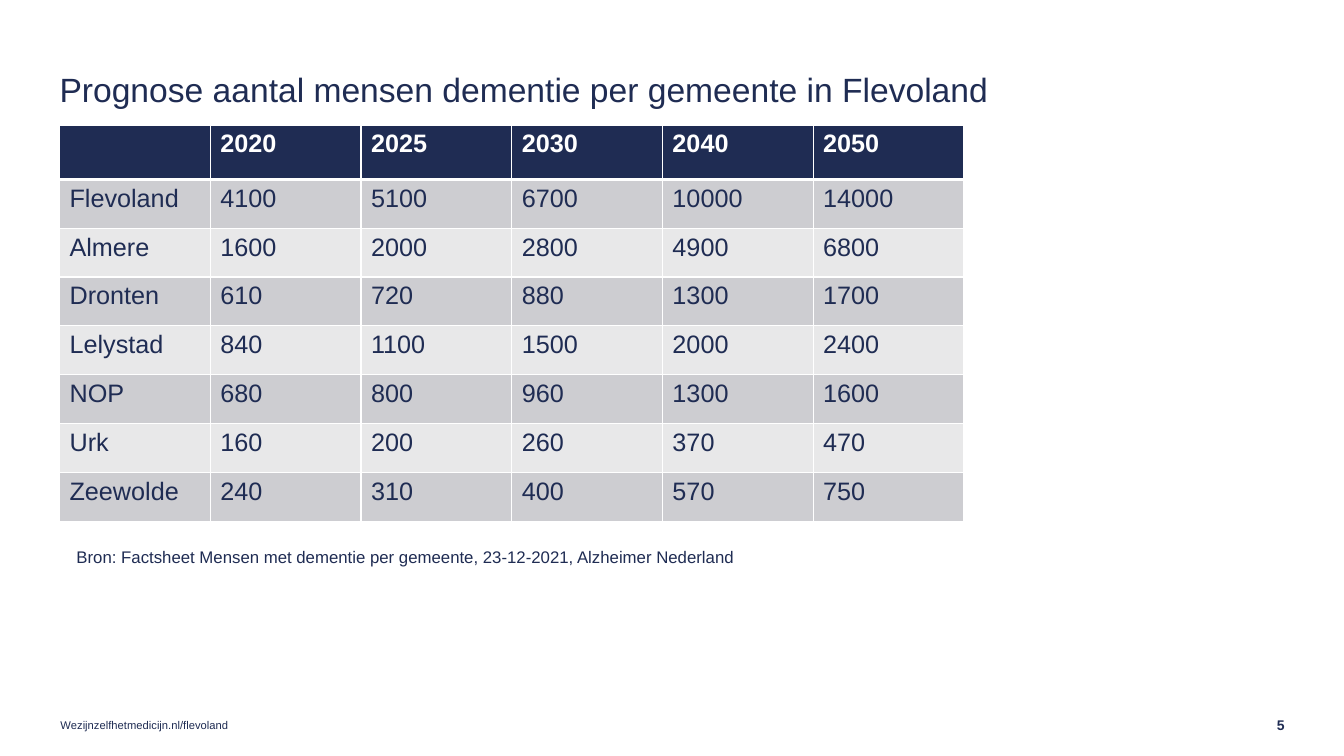
from lxml.etree import SubElement
from pptx import Presentation
from pptx.dml.color import RGBColor
from pptx.enum.text import MSO_ANCHOR, MSO_AUTO_SIZE, PP_ALIGN
from pptx.oxml.ns import qn
from pptx.util import Pt

TITLE = "Prognose aantal mensen dementie per gemeente in Flevoland"
YEARS = ["", "2020", "2025", "2030", "2040", "2050"]
FORECAST = [
    ("Flevoland", 4100, 5100, 6700, 10000, 14000),
    ("Almere", 1600, 2000, 2800, 4900, 6800),
    ("Dronten", 610, 720, 880, 1300, 1700),
    ("Lelystad", 840, 1100, 1500, 2000, 2400),
    ("NOP", 680, 800, 960, 1300, 1600),
    ("Urk", 160, 200, 260, 370, 470),
    ("Zeewolde", 240, 310, 400, 570, 750),
]
SOURCE = "Bron: Factsheet Mensen met dementie per gemeente, 23-12-2021, Alzheimer Nederland"
FOOTER = "Wezijnzelfhetmedicijn.nl/flevoland"
PAGE_NUMBER = "5"

NAVY = RGBColor(0x1F, 0x2C, 0x53)
WHITE = RGBColor(0xFF, 0xFF, 0xFF)
DARK_BAND = RGBColor(0xCD, 0xCD, 0xD1)
LIGHT_BAND = RGBColor(0xE8, 0xE8, 0xE9)
FONT = "Arial"

EMU_PER_PX = 9144
SLIDE_SIZE = (1333, 750)
TITLE_BOX = (59, 60, 1215, 41)
TABLE_BOX = (59, 124, 897, 393)
HEADER_HEIGHT = 54
SOURCE_BOX = (66, 537, 1078, 30)
FOOTER_BOX = (60, 712, 451, 14)
NUMBER_BOX = (1245, 712, 29, 14)


def px(length):
    return round(length * EMU_PER_PX)


def style(para, size, color=NAVY, bold=False):
    for span in para.runs:
        font = span.font
        font.name, font.size, font.bold = FONT, Pt(size), bold
        font.color.rgb = color


def set_insets(frame, top=0):
    frame.margin_left = frame.margin_right = frame.margin_bottom = 0
    frame.margin_top = px(top)
    frame.vertical_anchor = MSO_ANCHOR.MIDDLE


def add_title(page):
    title = page.shapes.title
    title.left, title.top, title.width, title.height = map(px, TITLE_BOX)
    frame = title.text_frame
    frame.text = TITLE
    frame.auto_size = MSO_AUTO_SIZE.NONE
    set_insets(frame, top=12)
    para = frame.paragraphs[0]
    para.alignment = PP_ALIGN.LEFT
    para.line_spacing = Pt(32)
    style(para, 24)


def add_text(page, box, text, size, bold=False, align=PP_ALIGN.LEFT):
    frame = page.shapes.add_textbox(*map(px, box)).text_frame
    frame.word_wrap = True
    frame.text = text
    para = frame.paragraphs[0]
    para.alignment = align
    style(para, size, bold=bold)
    return frame


def set_borders(cell, top, bottom):
    properties = cell._tc.get_or_add_tcPr()
    widths = {"a:lnL": 1, "a:lnR": 1, "a:lnT": top, "a:lnB": bottom}
    for tag, width in widths.items():
        line = SubElement(properties, qn(tag), w=str(Pt(width)))
        fill = SubElement(line, qn("a:solidFill"))
        SubElement(fill, qn("a:srgbClr"), val=str(WHITE))


def add_forecast_table(page):
    rows = [YEARS, *FORECAST]
    width, height = TABLE_BOX[2:]
    table = page.shapes.add_table(len(rows), len(YEARS), *map(px, TABLE_BOX)).table
    for column in table.columns:
        column.width = px(width / len(YEARS))
    for index, values in enumerate(rows):
        header = index == 0
        row_height = HEADER_HEIGHT if header else (height - HEADER_HEIGHT) / len(FORECAST)
        table.rows[index].height = px(row_height)
        band = NAVY if header else DARK_BAND if index % 2 else LIGHT_BAND
        for cell, value in zip(table.rows[index].cells, values):
            cell.text = str(value)
            style(cell.text_frame.paragraphs[0], 18, WHITE if header else NAVY, header)
            set_borders(cell, top=3 if index == 1 else 1, bottom=3 if header else 1)
            cell.fill.solid()
            cell.fill.fore_color.rgb = band


def main():
    """Build the dementia forecast slide for Flevoland."""
    deck = Presentation()
    deck.slide_width, deck.slide_height = map(px, SLIDE_SIZE)
    page = deck.slides.add_slide(deck.slide_layouts[5])
    add_title(page)
    set_insets(add_text(page, FOOTER_BOX, FOOTER, 8))
    set_insets(add_text(page, NUMBER_BOX, PAGE_NUMBER, 10, True, PP_ALIGN.RIGHT))
    add_forecast_table(page)
    add_text(page, SOURCE_BOX, SOURCE, 12)
    deck.save("out.pptx")


if __name__ == "__main__":
    main()
